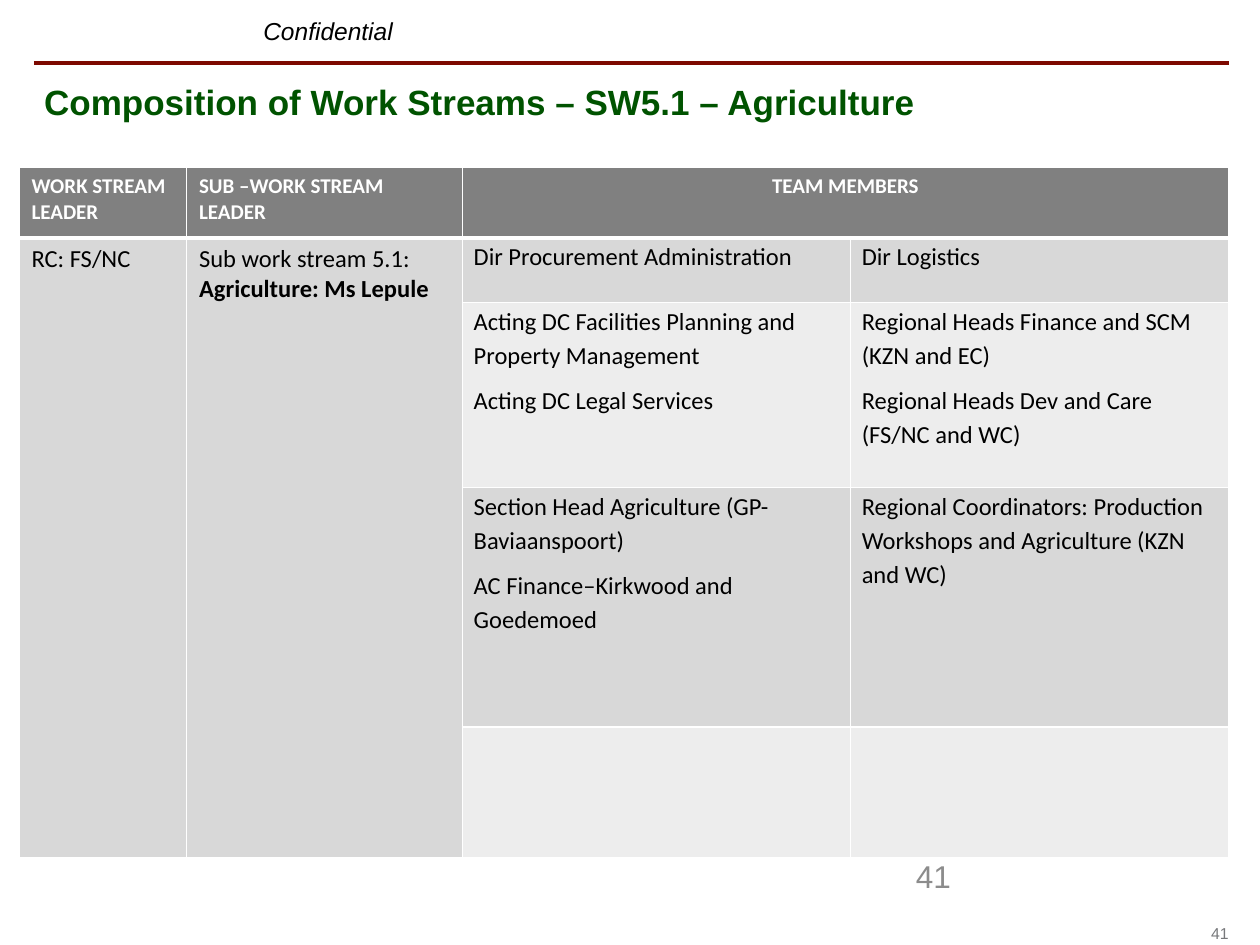
from lxml import etree
from pptx import Presentation
from pptx import util as u
from pptx.dml.color import RGBColor
from pptx.enum import shapes, text
from pptx.oxml.ns import qn

BLACK = RGBColor(0x00, 0x00, 0x00)
WHITE = RGBColor(0xFF, 0xFF, 0xFF)
RULE_RED = RGBColor(0x7D, 0x09, 0x00)
TITLE_GREEN = RGBColor(0x00, 0x53, 0x00)
HEADER_GRAY = RGBColor(0x80, 0x80, 0x80)
DARK_BAND = RGBColor(0xD8, 0xD8, 0xD8)
LIGHT_BAND = RGBColor(0xED, 0xED, 0xED)
PAGE_GRAY = RGBColor(0x77, 0x78, 0x7B)
NUMBER_GRAY = RGBColor(0x8C, 0x8C, 0x8C)

COLUMN_WIDTHS = (1.33, 2.19, 3.08, 3.0)
ROW_HEIGHTS = (0.56, 0.51, 1.47, 1.9, 1.04)
HEADERS = ("WORK STREAM LEADER", "SUB –WORK STREAM LEADER", "TEAM MEMBERS")
LEADERS = ("RC: FS/NC", "Sub work stream 5.1: **Agriculture: Ms Lepule")
TEAM_MEMBERS = (
    (["Dir Procurement Administration"], ["Dir Logistics"]),
    (["Acting DC Facilities Planning and Property Management",
      "Acting DC Legal Services"],
     ["Regional Heads Finance and SCM (KZN and EC)",
      "Regional Heads Dev and Care (FS/NC and WC)"]),
    (["Section Head Agriculture (GP-Baviaanspoort)",
      "AC Finance–Kirkwood and Goedemoed"],
     ["Regional Coordinators: Production Workshops and Agriculture (KZN and WC)"]),
)


def write_text(frame, paragraphs, size, color=BLACK, font="Arial", bold=False, italic=False,
               align=text.PP_ALIGN.LEFT, line_spacing=None, space_before=0, indent=0):
    """Fill a text frame; the part of a paragraph after ** is bold."""
    for index, content in enumerate(paragraphs):
        paragraph = frame.add_paragraph() if index else frame.paragraphs[0]
        paragraph.alignment = align
        if line_spacing:
            paragraph.line_spacing = line_spacing
        if index:
            paragraph.space_before = u.Pt(space_before)
        if indent:
            paragraph._p.get_or_add_pPr().set("marL", str(u.Inches(indent)))
        for part, words in enumerate(content.split("**")):
            run = paragraph.add_run()
            run.text = words
            run.font.name, run.font.size = font, u.Pt(size)
            run.font.bold, run.font.italic = bold or part > 0, italic
            run.font.color.rgb = color


def add_text(slide, box, content, margins=(0.1, 0.05), anchor=text.MSO_ANCHOR.TOP, **style):
    frame = slide.shapes.add_textbox(*map(u.Inches, box)).text_frame
    frame.word_wrap = True
    frame.vertical_anchor = anchor
    frame.margin_left = frame.margin_right = u.Inches(margins[0])
    frame.margin_top = frame.margin_bottom = u.Inches(margins[1])
    write_text(frame, [content], **style)


def add_header(slide, left, top, width):
    rule_top = u.Inches(top + 0.45)
    rule = slide.shapes.add_connector(shapes.MSO_CONNECTOR.STRAIGHT, u.Inches(left), rule_top,
                                      u.Inches(left + width), rule_top)
    rule.line.color.rgb = RULE_RED
    rule.line.width = u.Pt(2.25)
    etree.SubElement(rule._element.spPr, qn("a:effectLst"))
    add_text(slide, (left + 1.74, top, 1.84, 0.39), "Confidential", margins=(0.08, 0.08),
             size=14, italic=True)
    add_text(slide, (left + 0.08, top + 0.63, 9.15, 0.5),
             "Composition of Work Streams – SW5.1 – Agriculture", margins=(0, 0),
             size=20, color=TITLE_GREEN, bold=True, line_spacing=0.9)


def set_borders(cell, **widths):
    properties = cell._tc.get_or_add_tcPr()
    for side in "LRTB":
        line = etree.SubElement(properties, qn(f"a:ln{side}"), w=str(u.Pt(widths.get(side, 1))))
        fill = etree.SubElement(line, qn("a:solidFill"))
        etree.SubElement(fill, qn("a:srgbClr"), val=str(WHITE))


def row_fill(row, column):
    if row == 0:
        return HEADER_GRAY
    return DARK_BAND if column < 2 or row % 2 else LIGHT_BAND


def add_team_table(slide, left, top):
    box = (left, top, sum(COLUMN_WIDTHS), sum(ROW_HEIGHTS))
    table = slide.shapes.add_table(len(ROW_HEIGHTS), len(COLUMN_WIDTHS),
                                   *map(u.Inches, box)).table
    table.horz_banding = False
    for column, width in zip(table.columns, COLUMN_WIDTHS):
        column.width = u.Inches(width)
    for row, height in zip(table.rows, ROW_HEIGHTS):
        row.height = u.Inches(height)
    for row in range(len(ROW_HEIGHTS)):
        for column in range(len(COLUMN_WIDTHS)):
            cell = table.cell(row, column)
            set_borders(cell, B=3 if row == 0 else 1, T=3 if row == 1 else 1)
            cell.fill.solid()
            cell.fill.fore_color.rgb = row_fill(row, column)

    table.cell(0, 2).merge(table.cell(0, 3))
    for column, header in enumerate(HEADERS):
        align = text.PP_ALIGN.CENTER if column == 2 else text.PP_ALIGN.LEFT
        write_text(table.cell(0, column).text_frame, [header], size=12, color=WHITE,
                   font="Calibri", bold=True, align=align)
    for column, leader in enumerate(LEADERS):
        table.cell(1, column).merge(table.cell(len(ROW_HEIGHTS) - 1, column))
        write_text(table.cell(1, column).text_frame, [leader], size=14, font="Calibri")
    for row, groups in enumerate(TEAM_MEMBERS, start=1):
        for column, members in enumerate(groups, start=2):
            cell = table.cell(row, column)
            cell.margin_left = cell.margin_right = u.Inches(0.07)
            cell.margin_top = cell.margin_bottom = 0
            write_text(cell.text_frame, members, size=14, font="Calibri",
                       line_spacing=1.15, space_before=6, indent=0.02)


def add_page_numbers(slide, left, top):
    add_text(slide, (left, top, 2.33, 0.4), "41", size=18, color=NUMBER_GRAY)
    add_text(slide, (left + 2.29, top + 0.58, 0.29, 0.15), "41", margins=(0, 0),
             anchor=text.MSO_ANCHOR.MIDDLE, size=9, color=PAGE_GRAY,
             align=text.PP_ALIGN.RIGHT)


def main():
    presentation = Presentation()
    presentation.slide_width, presentation.slide_height = u.Inches(10), u.Inches(7.5)
    slide = presentation.slides.add_slide(presentation.slide_layouts[6])
    add_header(slide, 0.27, 0.05, 9.48)
    add_team_table(slide, 0.15, 1.33)
    add_page_numbers(slide, 7.17, 6.75)
    presentation.save("out.pptx")


if __name__ == "__main__":
    main()
